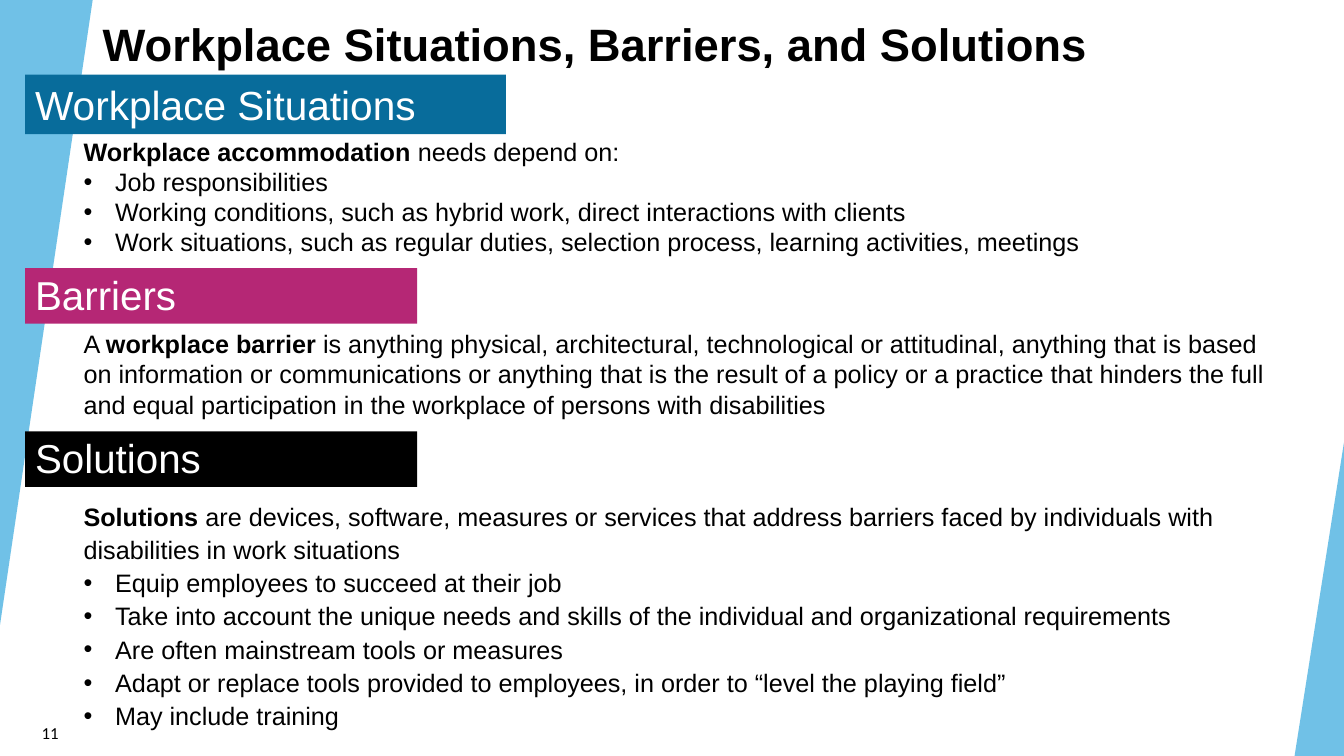
from lxml import etree
from pptx import Presentation
from pptx.dml.color import RGBColor
from pptx.enum.shapes import MSO_SHAPE as Shape
from pptx.enum.text import MSO_ANCHOR as Anchor, MSO_AUTO_SIZE as AutoSize, PP_ALIGN as Align
from pptx.oxml.ns import qn
from pptx.util import Pt

BLACK = RGBColor(0x00, 0x00, 0x00)
WHITE = RGBColor(0xFF, 0xFF, 0xFF)
SKY = RGBColor(0x58, 0xB7, 0xE3)
BLUE = RGBColor(0x08, 0x6C, 0x9B)
MAGENTA = RGBColor(0xB5, 0x27, 0x75)

# Content
WIDTH, HEIGHT = 960, 540
TITLE = "Workplace Situations, Barriers, and Solutions"
PAGE_NUMBER = "11"
LABEL_LEFT, BODY_LEFT, BULLET_INDENT = 18, 52.6, 22.5

# Boxes are (top, width, height); intro runs are (text, bold)
SECTIONS = [
    {
        "label": "Workplace Situations", "color": BLUE, "size": 29,
        "label_box": (53.3, 343.4, 42.5), "body_box": (93.6, 920.9, 94.3),
        "spacing": 1.0,
        "intro": [("Workplace accommodation ", True), ("needs depend on:", False)],
        "bullets": [
            "Job responsibilities",
            "Working conditions, such as hybrid work, direct interactions with clients",
            "Work situations, such as regular duties, selection process, "
            "learning activities, meetings",
        ],
    },
    {
        "label": "Barriers", "color": MAGENTA, "size": 28.8,
        "label_box": (191.5, 280, 39.6), "body_box": (231.1, 864, 72.7),
        "spacing": 1.0,
        "intro": [
            ("A ", False),
            ("workplace barrier ", True),
            ("is anything physical, architectural, technological or attitudinal, "
             "anything that is based on information or communications or anything "
             "that is the result of a policy or a practice that hinders the full "
             "and equal participation in the workplace of persons with disabilities",
             False),
        ],
        "bullets": [],
    },
    {
        "label": "Solutions", "color": BLACK, "size": 28.8,
        "label_box": (308.2, 280, 39.6), "body_box": (352.1, 858.2, 173.5),
        "spacing": 1.1,
        "intro": [
            ("Solutions", True),
            (" are devices, software, measures or services that address barriers "
             "faced by individuals with disabilities in work situations", False),
        ],
        "bullets": [
            "Equip employees to succeed at their job",
            "Take into account the unique needs and skills of the individual "
            "and organizational requirements",
            "Are often mainstream tools or measures",
            "Adapt or replace tools provided to employees, in order to "
            "“level the playing field”",
            "May include training",
        ],
    },
]

# Left, top, width, height, rotation of the corner triangles
TRIANGLES = [(0, 0, 66.2, 446.4, 180), (924.7, 316.1, 35.3, 223.9, 0)]


def add_run(paragraph, text, size, color=BLACK, bold=False, font="Arial"):
    run = paragraph.add_run()
    run.text = text
    run.font.name = font
    run.font.size = Pt(size)
    run.font.bold = bold
    run.font.color.rgb = color


def add_filled(slide, kind, left, top, width, height, color):
    shape = slide.shapes.add_shape(kind, Pt(left), Pt(top), Pt(width), Pt(height))
    shape.shadow.inherit = False
    shape.fill.solid()
    shape.fill.fore_color.rgb = color
    shape.line.fill.background()
    return shape


def add_text_frame(slide, left, top, width, height):
    box = slide.shapes.add_textbox(Pt(left), Pt(top), Pt(width), Pt(height))
    box.text_frame.word_wrap = True
    return box.text_frame


def make_bullet(paragraph):
    properties = paragraph._p.get_or_add_pPr()
    properties.set("marL", str(Pt(BULLET_INDENT)))
    properties.set("indent", str(-Pt(BULLET_INDENT)))
    etree.SubElement(properties, qn("a:buFont")).set("typeface", "Arial")
    etree.SubElement(properties, qn("a:buChar")).set("char", "•")


def add_triangle(slide, left, top, width, height, rotation):
    triangle = add_filled(slide, Shape.ISOSCELES_TRIANGLE, left, top, width, height, SKY)
    triangle.adjustments[0] = 1
    triangle.rotation = rotation
    color = triangle._element.spPr.find(qn("a:solidFill"))[0]
    etree.SubElement(color, qn("a:alpha")).set("val", "85000")


def add_section(slide, section):
    # Coloured label
    label = add_filled(slide, Shape.RECTANGLE, LABEL_LEFT, *section["label_box"],
                       section["color"])
    frame = label.text_frame
    frame.vertical_anchor = Anchor.BOTTOM
    frame.paragraphs[0].alignment = Align.LEFT
    add_run(frame.paragraphs[0], section["label"], section["size"], WHITE)

    # Introduction and bullets
    frame = add_text_frame(slide, BODY_LEFT, *section["body_box"])
    intro = frame.paragraphs[0]
    intro.line_spacing = section["spacing"]
    for text, bold in section["intro"]:
        add_run(intro, text, 18, bold=bold)
    for text in section["bullets"]:
        paragraph = frame.add_paragraph()
        paragraph.line_spacing = section["spacing"]
        make_bullet(paragraph)
        add_run(paragraph, text, 18)


def main():
    presentation = Presentation()
    presentation.slide_width, presentation.slide_height = Pt(WIDTH), Pt(HEIGHT)
    slide = presentation.slides.add_slide(presentation.slide_layouts[5])
    slide.background.fill.solid()
    slide.background.fill.fore_color.rgb = WHITE

    # Title
    title = slide.shapes.title
    title.left, title.top, title.width, title.height = Pt(66.2), Pt(4.3), Pt(736.6), Pt(31)
    frame = title.text_frame
    frame.auto_size = AutoSize.NONE
    frame.vertical_anchor = Anchor.TOP
    frame.margin_top = Pt(7.2)
    frame.paragraphs[0].alignment = Align.LEFT
    add_run(frame.paragraphs[0], TITLE, 32.4, bold=True)

    # Corner triangles and sections
    for triangle in TRIANGLES:
        add_triangle(slide, *triangle)
    for section in SECTIONS:
        add_section(slide, section)

    # Page number
    frame = add_text_frame(slide, -5, 509, 54, 28.8)
    frame.vertical_anchor = Anchor.MIDDLE
    frame.paragraphs[0].alignment = Align.RIGHT
    add_run(frame.paragraphs[0], PAGE_NUMBER, 12, font="Calibri")

    presentation.save("out.pptx")


if __name__ == "__main__":
    main()
